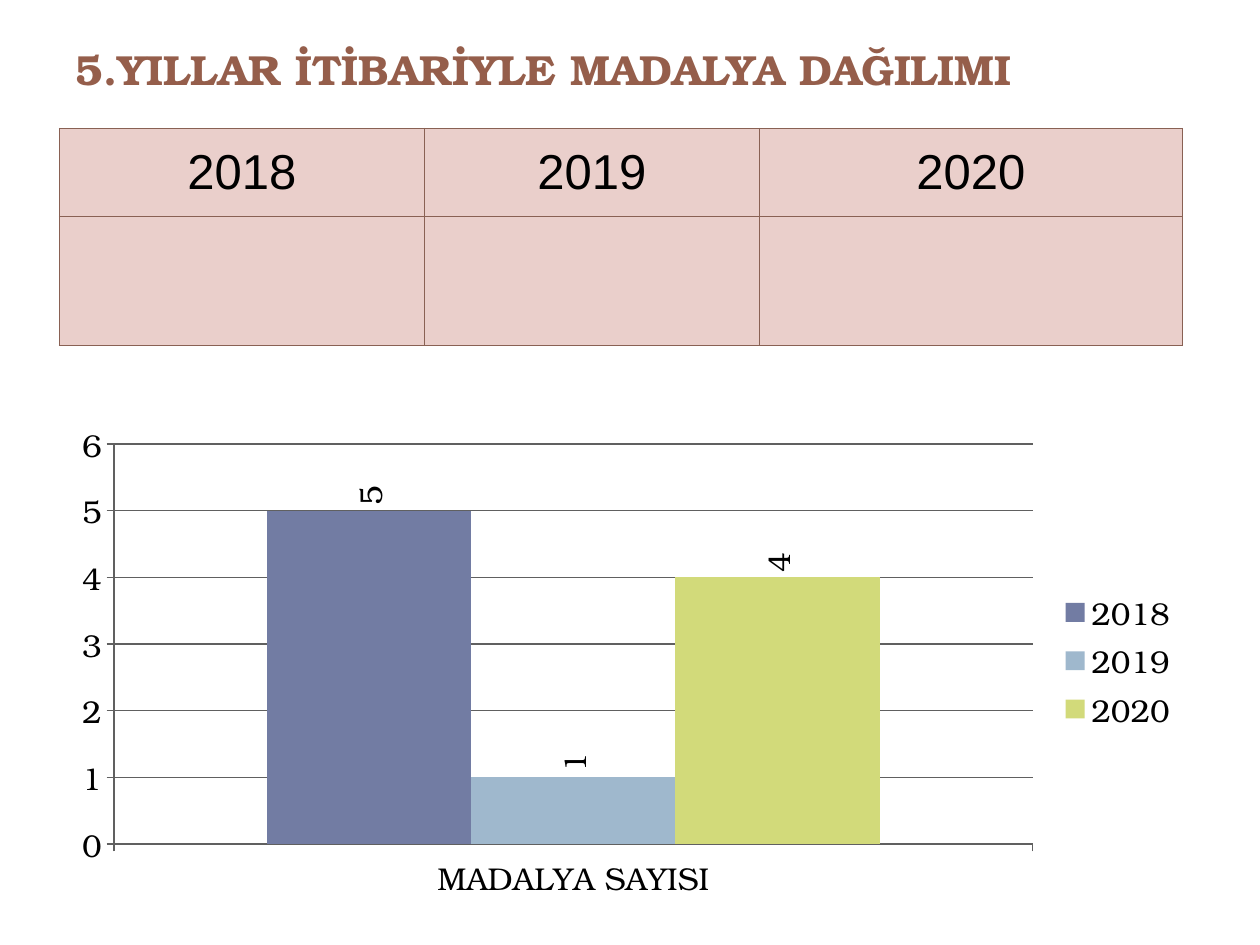
import pptx
import pptx.chart.data
import pptx.dml.color
import pptx.enum.chart
import pptx.enum.text
import pptx.oxml
import pptx.oxml.ns
import pptx.util
from pptx.dml.color import RGBColor
from pptx.util import Cm

BLACK = RGBColor(0x00, 0x00, 0x00)
BROWN = RGBColor(0x95, 0x5E, 0x4B)
PINK = RGBColor(0xEA, 0xCF, 0xCB)
GRID_GREY = RGBColor(0x60, 0x60, 0x60)
BORDER = RGBColor(0x89, 0x61, 0x54)
SERIES_COLORS = [
    RGBColor(0x72, 0x7C, 0xA3),
    RGBColor(0x9F, 0xB8, 0xCD),
    RGBColor(0xD2, 0xDA, 0x7A),
]
SERIF = "TeX Gyre Bonum"
YEARS = ["2018", "2019", "2020"]
MEDALS = [5, 1, 4]


def format_font(font, name, size, color):
    font.name = name
    font.size = pptx.util.Pt(size)
    font.color.rgb = color


def add_borders(cell):
    properties = cell._tc.get_or_add_tcPr()
    for position, side in enumerate(["lnL", "lnR", "lnT", "lnB"]):
        line = pptx.oxml.parse_xml(
            f'<a:{side} {pptx.oxml.ns.nsdecls("a")} w="9525"><a:solidFill>'
            f'<a:srgbClr val="{BORDER}"/></a:solidFill></a:{side}>'
        )
        properties.insert(position, line)


presentation = pptx.Presentation()
presentation.slide_width = Cm(25.4)
presentation.slide_height = Cm(19.05)
slide = presentation.slides.add_slide(presentation.slide_layouts[6])

# Title
title = slide.shapes.add_textbox(Cm(1.27), Cm(0.76), Cm(22.86), Cm(2.36))
title.text_frame.word_wrap = True
title.text_frame.text = "5.YILLAR İTİBARİYLE MADALYA DAĞILIMI"
title_font = title.text_frame.paragraphs[0].runs[0].font
format_font(title_font, SERIF, 24, BROWN)
title_font.bold = True

# Table of years, with an empty second row
table = slide.shapes.add_table(2, 3, Cm(1.2), Cm(2.59), Cm(22.63), Cm(4.37)).table
for column, width in zip(table.columns, [7.35, 6.76, 8.52]):
    column.width = Cm(width)
for row, height in zip(table.rows, [1.77, 2.6]):
    row.height = Cm(height)
for cell in table.iter_cells():
    cell.fill.solid()
    cell.fill.fore_color.rgb = PINK
    add_borders(cell)
for cell, year in zip(table.rows[0].cells, YEARS):
    cell.text_frame.text = year
    cell.vertical_anchor = pptx.enum.text.MSO_ANCHOR.MIDDLE
    paragraph = cell.text_frame.paragraphs[0]
    paragraph.alignment = pptx.enum.text.PP_ALIGN.CENTER
    indent = Cm(0.97)
    paragraph_properties = paragraph._p.get_or_add_pPr()
    paragraph_properties.set("marL", str(indent))
    paragraph_properties.set("indent", str(-indent))
    year_font = paragraph.runs[0].font
    format_font(year_font, "Arial", 28, BLACK)
    year_font.bold = False

# Chart of medals
chart_data = pptx.chart.data.CategoryChartData()
chart_data.categories = ["MADALYA SAYISI"]
for year, medals in zip(YEARS, MEDALS):
    chart_data.add_series(year, [medals])
chart = slide.shapes.add_chart(
    pptx.enum.chart.XL_CHART_TYPE.COLUMN_CLUSTERED,
    Cm(1.2), Cm(8.33), Cm(22.8), Cm(9.98), chart_data,
).chart
format_font(chart.font, SERIF, 18, BLACK)
chart.has_title = False
chart.has_legend = True
chart.legend.position = pptx.enum.chart.XL_LEGEND_POSITION.RIGHT
chart.legend.include_in_layout = False

# Columns with upright value labels
plot = chart.plots[0]
plot.gap_width = 150
plot.overlap = 0
plot.vary_by_categories = False
for series, color in zip(plot.series, SERIES_COLORS):
    series.format.fill.solid()
    series.format.fill.fore_color.rgb = color
    labels = series.data_labels
    labels.show_value = True
    labels.position = pptx.enum.chart.XL_LABEL_POSITION.OUTSIDE_END
    format_font(labels.font, SERIF, 18, BLACK)
    label_body = labels._element.find(".//" + pptx.oxml.ns.qn("a:bodyPr"))
    label_body.set("rot", "-5400000")
    label_body.set("vert", "horz")

# Axes and gridlines
value_axis = chart.value_axis
value_axis.minimum_scale = 0
value_axis.maximum_scale = 6
value_axis.major_unit = 1
value_axis.has_major_gridlines = True
for axis in [chart.category_axis, value_axis]:
    axis.major_tick_mark = pptx.enum.chart.XL_TICK_MARK.OUTSIDE
    axis.minor_tick_mark = pptx.enum.chart.XL_TICK_MARK.NONE
for part in [chart.category_axis, value_axis, value_axis.major_gridlines]:
    part.format.line.color.rgb = GRID_GREY
    part.format.line.width = pptx.util.Pt(0.75)

presentation.save("out.pptx")
